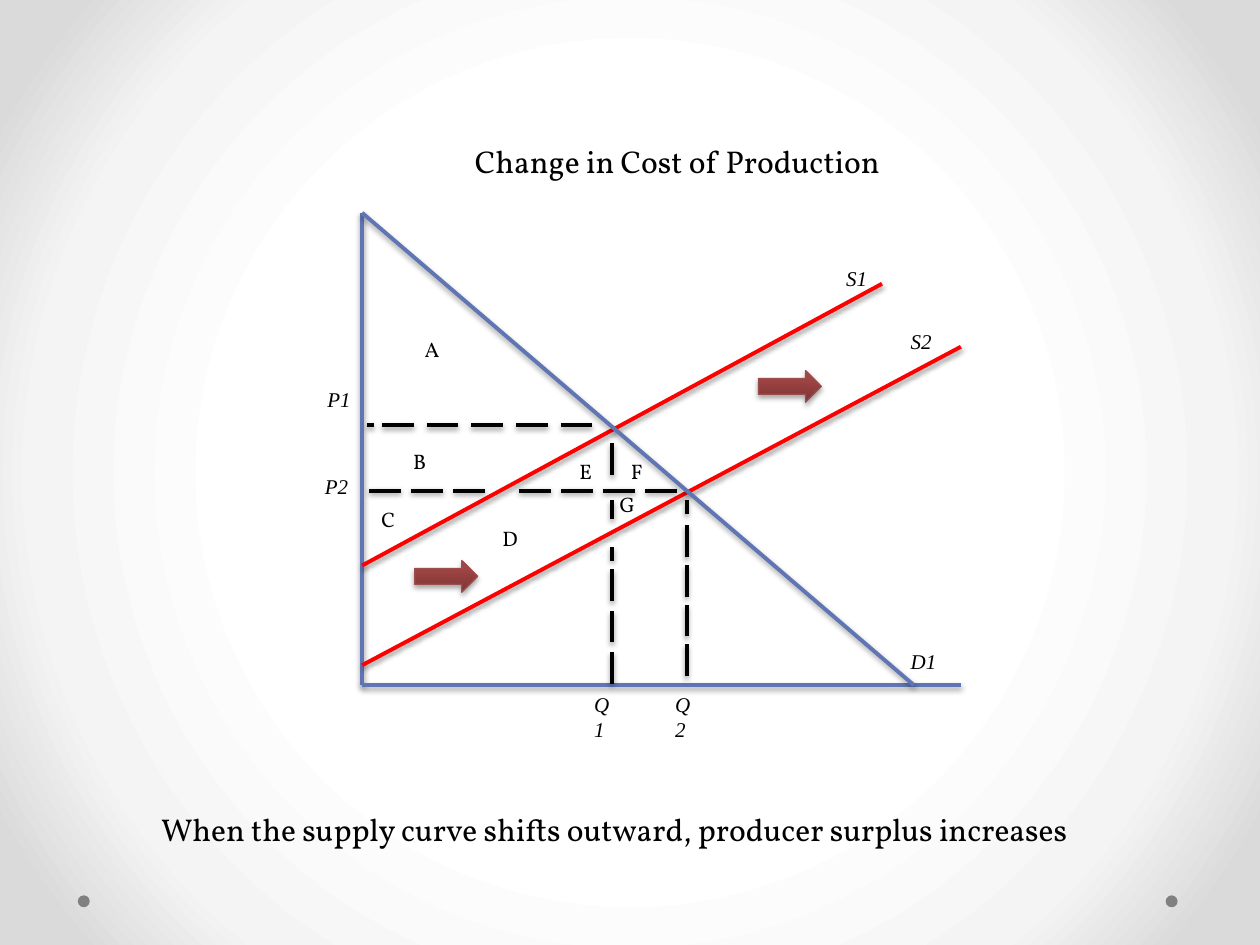
from dataclasses import dataclass

from pptx import Presentation
from pptx.dml.color import RGBColor
from pptx.enum.shapes import MSO_CONNECTOR, MSO_SHAPE
from pptx.enum.text import MSO_ANCHOR, MSO_AUTO_SIZE, PP_ALIGN
from pptx.oxml import parse_xml
from pptx.oxml.ns import nsdecls
from pptx.util import Cm, Pt


@dataclass(frozen=True)
class Theme:
    ink: str = "000000"
    axis: str = "6076B4"
    supply: str = "FF0000"
    dot: str = "808080"
    arrow_line: str = "9A4E4E"
    arrow_stops: tuple = ((0, "7D3535"), (80, "A24545"), (100, "A44343"))
    page_stops: tuple = ((50, "FFFFFF"), (76, "F4F4F4"), (92, "DADADA"))
    area_font: str = "Vollkorn"
    curve_font: str = "Times New Roman"
    heading_size: float = 18
    label_size: float = 12
    line_width: float = 2.25


THEME = Theme()
HEADING = {"name": THEME.area_font, "size": Pt(THEME.heading_size), "bold": False}
AREA = {"name": THEME.area_font, "size": Pt(THEME.label_size)}
CURVE = {"name": THEME.curve_font, "size": Pt(THEME.label_size), "italic": True}

# All lengths below are in centimetres.
ORIGIN_X, TOP_Y, BASE_Y, RIGHT_X = 7.3, 4.29, 13.81, 19.37
DASH = 0.64

SOLID_LINES = [
    (ORIGIN_X, TOP_Y, ORIGIN_X, BASE_Y, THEME.axis),
    (RIGHT_X, BASE_Y, ORIGIN_X, BASE_Y, THEME.axis),
    (ORIGIN_X, 11.4, 17.78, 5.72, THEME.supply),
    (ORIGIN_X, 13.41, RIGHT_X, 6.99, THEME.supply),
    (ORIGIN_X, TOP_Y, 18.42, BASE_Y, THEME.axis),
]
# Fixed coordinate, first start, step, count, dash length
PRICE_DASHES = [
    (8.57, 7.39, 0, 1, 0.15),
    (8.57, 7.7, 0.9, 5, DASH),
    (9.89, 7.44, 0.85, 3, DASH),
    (9.89, 10.46, 0.85, 4, DASH),
]
QUANTITY_DASHES = [
    (12.33, 8.94, 0, 1, DASH),
    (12.33, 10.08, 0, 1, 0.38),
    (12.33, 11.02, 0, 1, 0.28),
    (12.33, 11.48, 0.83, 3, DASH),
    (13.84, 10.08, 0, 1, 0.28),
    (13.84, 10.59, 0.8, 4, DASH),
]
SHIFT_ARROWS = [(15.29, 7.47), (8.36, 11.3)]
# Text, left, top, width
CURVE_LABELS = [
    ("S1", 16.81, 5.23, 0.97),
    ("S2", 18.11, 6.5, 1.27),
    ("D1", 18.11, 12.95, 1.27),
    ("P1", 6.35, 7.67, 0.97),
    ("P2", 6.3, 9.42, 0.97),
    ("Q1", 11.73, 13.82, 0.97),
    ("Q2", 13.36, 13.82, 0.97),
]
AREA_LABELS = [
    ("A", 8.31, 6.65, 0.84),
    ("B", 8.08, 8.92, 0.99),
    ("C", 7.44, 10.08, 0.81),
    ("D", 9.88, 10.46, 0.89),
    ("E", 11.43, 9.12, 0.81),
    ("F", 12.47, 9.12, 0.79),
    ("G", 12.24, 9.78, 0.84),
]


def rgb(value):
    return RGBColor.from_string(value)


def set_gradient(fill_parent, stops, direction):
    """Replace the solid fill inside fill_parent with a gradient."""
    stop_xml = "".join(
        f'<a:gs pos="{position * 1000}"><a:srgbClr val="{color}"/></a:gs>'
        for position, color in stops
    )
    gradient = parse_xml(
        f'<a:gradFill {nsdecls("a")} rotWithShape="1">'
        f"<a:gsLst>{stop_xml}</a:gsLst>{direction}</a:gradFill>"
    )
    solid = fill_parent.xpath("./a:solidFill")[0]
    fill_parent.replace(solid, gradient)


def paint_background(page):
    page.background.fill.solid()
    properties = page.element.xpath("./p:cSld/p:bg/p:bgPr")[0]
    center = '<a:fillToRect l="50000" t="50000" r="50000" b="50000"/>'
    set_gradient(properties, THEME.page_stops, f'<a:path path="circle">{center}</a:path>')


def add_shadow(shape, alpha, distance):
    """Cast a soft shadow straight down; call after fill and line are set."""
    shape.element.spPr.append(parse_xml(
        f'<a:effectLst {nsdecls("a")}>'
        f'<a:outerShdw blurRad="{Pt(3.1)}" dist="{Pt(distance)}" dir="5400000" rotWithShape="0">'
        f'<a:srgbClr val="{THEME.ink}"><a:alpha val="{alpha * 1000}"/></a:srgbClr>'
        "</a:outerShdw></a:effectLst>"
    ))


def add_line(page, start_x, start_y, end_x, end_y, color):
    line = page.shapes.add_connector(
        MSO_CONNECTOR.STRAIGHT, Cm(start_x), Cm(start_y), Cm(end_x), Cm(end_y)
    )
    line.line.color.rgb = rgb(color)
    line.line.width = Pt(THEME.line_width)
    add_shadow(line, 38, 1.6)


def add_dashes(page):
    for y, first, step, count, length in PRICE_DASHES:
        for index in range(count):
            x = first + index * step
            add_line(page, x, y, x + length, y, THEME.ink)
    for x, first, step, count, length in QUANTITY_DASHES:
        for index in range(count):
            y = first + index * step
            add_line(page, x, y + length, x, y, THEME.ink)


def add_shift_arrow(page, left, top):
    arrow = page.shapes.add_shape(
        MSO_SHAPE.RIGHT_ARROW, Cm(left), Cm(top), Cm(1.27), Cm(0.64)
    )
    arrow.fill.solid()
    set_gradient(arrow.element.spPr, THEME.arrow_stops, '<a:lin ang="16200000" scaled="0"/>')
    arrow.line.color.rgb = rgb(THEME.arrow_line)
    arrow.line.width = Pt(0.75)
    add_shadow(arrow, 35, 1.8)


def add_dot(page, left):
    dot = page.shapes.add_shape(MSO_SHAPE.OVAL, Cm(left), Cm(18.05), Cm(0.24), Cm(0.24))
    dot.shadow.inherit = False
    dot.fill.solid()
    dot.fill.fore_color.rgb = rgb(THEME.dot)
    dot.line.fill.background()


def write_text(box, text, font_format, wrap=False):
    frame = box.text_frame
    frame_format = {
        "word_wrap": wrap,
        "auto_size": MSO_AUTO_SIZE.NONE,
        "vertical_anchor": MSO_ANCHOR.TOP,
    }
    for name, value in frame_format.items():
        setattr(frame, name, value)
    para = frame.paragraphs[0]
    para.alignment = PP_ALIGN.LEFT
    span = para.add_run()
    span.text = text
    for name, value in font_format.items():
        setattr(span.font, name, value)
    span.font.color.rgb = rgb(THEME.ink)


def add_label(page, text, left, top, width, height, font_format, wrap=False):
    box = page.shapes.add_textbox(Cm(left), Cm(top), Cm(width), Cm(height))
    write_text(box, text, font_format, wrap)


def place_title(page, text):
    title = page.shapes.title
    position = {"left": 9.32, "top": 2.74, "width": 8.92, "height": 1.02}
    for name, value in position.items():
        setattr(title, name, Cm(value))
    write_text(title, text, HEADING)


def main():
    deck = Presentation()
    deck.slide_width, deck.slide_height = Cm(25.4), Cm(19.05)
    page = deck.slides.add_slide(deck.slide_layouts[5])
    paint_background(page)
    for left in (23.5, 1.57):
        add_dot(page, left)
    place_title(page, "Change in Cost of Production")
    for line in SOLID_LINES:
        add_line(page, *line)
    add_dashes(page)
    for left, top in SHIFT_ARROWS:
        add_shift_arrow(page, left, top)
    for label in CURVE_LABELS:
        add_label(page, *label, 0.97, CURVE, wrap=True)
    for label in AREA_LABELS:
        add_label(page, *label, 0.76, AREA)
    caption = "When the supply curve shifts outward, producer surplus increases"
    add_label(page, caption, 3, 16.21, 19.38, 1.02, HEADING)
    deck.save("out.pptx")


if __name__ == "__main__":
    main()
